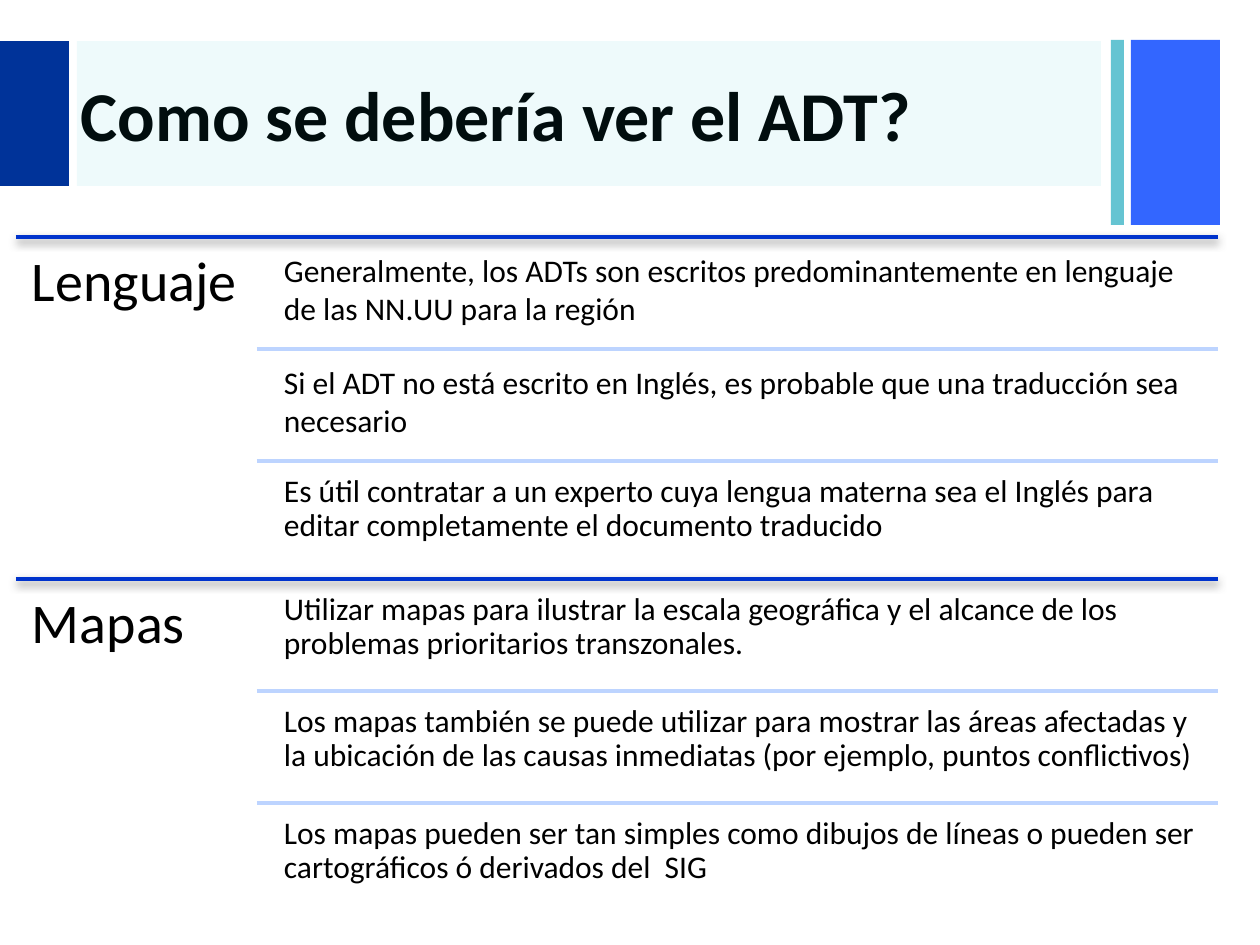
from dataclasses import dataclass

from lxml import etree
from pptx import Presentation
from pptx.dml.color import RGBColor
from pptx.enum.shapes import MSO_CONNECTOR, MSO_SHAPE
from pptx.enum.text import MSO_ANCHOR, MSO_AUTO_SIZE, PP_ALIGN
from pptx.oxml.ns import qn
from pptx.util import Emu, Pt

RECTANGLE = MSO_SHAPE.RECTANGLE
STRAIGHT = MSO_CONNECTOR.STRAIGHT
TOP, MIDDLE = MSO_ANCHOR.TOP, MSO_ANCHOR.MIDDLE
LEFT = PP_ALIGN.LEFT
NO_AUTOFIT = MSO_AUTO_SIZE.NONE

PX_PER_INCH = 126
PAGE_WIDTH, PAGE_HEIGHT = 1260, 945


@dataclass(frozen=True)
class Theme:
    font: str = "Calibri"
    text: str = "000000"
    navy: str = "003399"
    blue: str = "3366FF"
    teal: str = "65C4D2"
    banner: str = "14C5D0"
    rule: str = "0033CC"
    divider: str = "BDD4FF"
    shadow: str = "808080"
    title_size: int = 40
    label_size: int = 32
    item_size: int = 18
    rule_weight: float = 2.25
    divider_weight: float = 2


THEME = Theme()

TITLE = "Como se debería ver el ADT?"
# Each section: label, then items with their line spacing
SECTIONS = [
    ("Lenguaje", [
        ("Generalmente, los ADTs son escritos predominantemente en lenguaje "
         "de las NN.UU para la región", 1.0),
        ("Si el ADT no está escrito en Inglés, es probable que una traducción "
         "sea necesario", 1.0),
        ("Es útil contratar a un experto cuya lengua materna sea el Inglés "
         "para editar completamente el documento traducido", 0.9),
    ]),
    ("Mapas", [
        ("Utilizar mapas para ilustrar la escala geográfica y el alcance de "
         "los problemas prioritarios transzonales.", 0.9),
        ("Los mapas también se puede utilizar para mostrar las áreas afectadas "
         "y la ubicación de las causas inmediatas (por ejemplo, puntos "
         "conflictivos)", 0.9),
        ("Los mapas pueden ser tan simples como dibujos de líneas o pueden ser "
         "cartográficos ó derivados del  SIG", 0.9),
    ]),
]


def px(length):
    return Emu(round(length * 914400 / PX_PER_INCH))


def set_values(target, values):
    for name, value in values.items():
        setattr(target, name, value)


def add_panel(page, box, color, opacity=100):
    panel = page.shapes.add_shape(RECTANGLE, *map(px, box))
    panel.shadow.inherit = False
    panel.fill.solid()
    panel.fill.fore_color.rgb = RGBColor.from_string(color)
    panel.line.fill.background()
    if opacity < 100:
        color_node = panel.fill._xPr.find(".//" + qn("a:srgbClr"))
        etree.SubElement(color_node, qn("a:alpha"), val=str(opacity * 1000))


def add_line(page, left, top, width, color, weight, shadowed=False):
    line = page.shapes.add_connector(
        STRAIGHT, px(left), px(top), px(left + width), px(top))
    line.line.color.rgb = RGBColor.from_string(color)
    line.line.width = Pt(weight)
    effects = etree.SubElement(line._element.spPr, qn("a:effectLst"))
    if shadowed:
        shadow = etree.SubElement(
            effects, qn("a:outerShdw"), blurRad=str(Pt(5)), dist=str(Pt(2)),
            dir="5400000", rotWithShape="0")
        tint = etree.SubElement(shadow, qn("a:srgbClr"), val=THEME.shadow)
        etree.SubElement(tint, qn("a:alpha"), val="75000")


def write_text(frame, text, size, anchor=TOP, bold=False, spacing=1.0, inset=None):
    set_values(frame, {"word_wrap": True, "auto_size": NO_AUTOFIT,
                       "vertical_anchor": anchor})
    if inset is not None:
        set_values(frame, {f"margin_{side}": px(inset)
                           for side in ("left", "top", "right", "bottom")})
    para = frame.paragraphs[0]
    set_values(para, {"alignment": LEFT, "line_spacing": spacing})
    span = para.add_run()
    span.text = text
    set_values(span.font, {"name": THEME.font, "size": Pt(size), "bold": bold})
    span.font.color.rgb = RGBColor.from_string(THEME.text)


def add_text(page, box, text, size, **options):
    text_box = page.shapes.add_textbox(*map(px, box))
    write_text(text_box.text_frame, text, size, **options)


def add_header(page, left, top, width):
    """Colour bars and the title banner."""
    banner_height, bar_height = 145, 185
    right = left + width
    add_panel(page, (right - 89, top, 89, bar_height), THEME.blue)
    add_panel(page, (right - 109, top, 13, bar_height), THEME.teal)
    add_panel(page, (left + 77, top + 1, 1024, banner_height),
              THEME.banner, opacity=7)
    add_panel(page, (left, top + 1, 69, banner_height), THEME.navy)

    title = page.shapes.title
    box = (left + 68, top + 3, 1042, 141)
    set_values(title, dict(zip(("left", "top", "width", "height"), map(px, box))))
    write_text(title.text_frame, TITLE, THEME.title_size, anchor=MIDDLE, bold=True)


def add_section(page, left, top, width, height, label, items):
    """A ruled section: label on the left, divided items on the right."""
    label_width, indent, gap, pitch = 241, 18, 5, 112
    add_line(page, left, top, width, THEME.rule, THEME.rule_weight, shadowed=True)
    add_text(page, (left, top, label_width, height), label, THEME.label_size,
             spacing=0.9, inset=16)

    item_left = left + label_width
    item_width = width - label_width
    for index, (text, spacing) in enumerate(items):
        item_top = top + index * pitch
        if index:
            add_line(page, item_left, item_top, item_width,
                     THEME.divider, THEME.divider_weight)
        add_text(page, (item_left + indent, item_top + gap,
                        item_width - indent, pitch - gap),
                 text, THEME.item_size, spacing=spacing, inset=9)


def main():
    deck = Presentation()
    set_values(deck, {"slide_width": px(PAGE_WIDTH), "slide_height": px(PAGE_HEIGHT)})
    page = deck.slides.add_slide(deck.slide_layouts.get_by_name("Title Only"))

    add_header(page, 0, 40, 1220)
    section_height = 342
    for index, (label, items) in enumerate(SECTIONS):
        add_section(page, 16, 237 + index * section_height, 1202, section_height,
                    label, items)
    deck.save("out.pptx")


if __name__ == "__main__":
    main()
